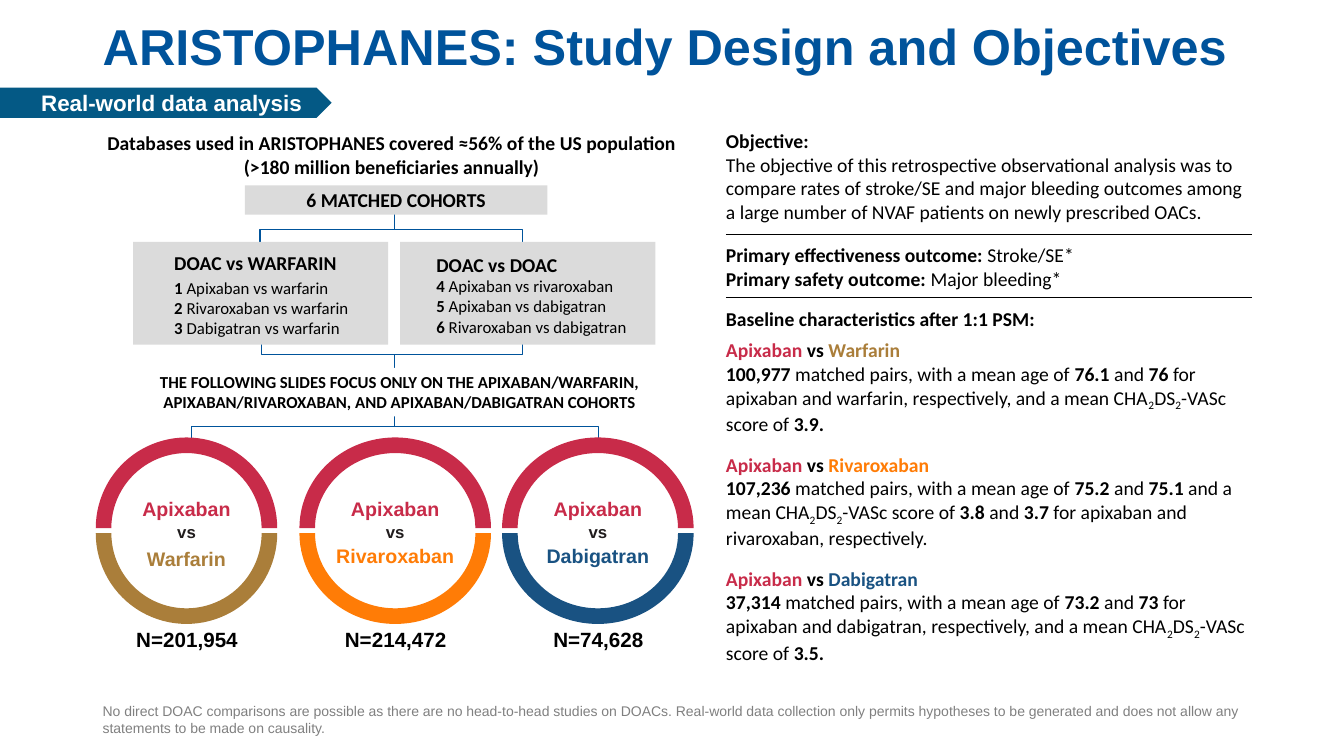
from copy import deepcopy
from dataclasses import dataclass

from lxml.etree import SubElement
from pptx import Presentation
from pptx.dml.color import RGBColor
from pptx.enum.shapes import MSO_CONNECTOR, MSO_SHAPE
from pptx.enum.text import MSO_ANCHOR as ANCHOR, MSO_AUTO_SIZE, PP_ALIGN as ALIGN
from pptx.oxml.ns import qn
from pptx.util import Pt

PX = 9144  # 100 px to the inch


@dataclass(frozen=True)
class Theme:
    head: str = "Arial"
    body: str = "Calibri"
    blue: str = "00539B"
    banner: str = "045985"
    panel: str = "DBDBDB"
    black: str = "000000"
    ink: str = "201C1D"
    white: str = "FFFFFF"
    grey: str = "808080"
    apixaban: str = "C82B49"
    warfarin: str = "AA7E3A"
    rivaroxaban: str = "FF7C06"
    dabigatran: str = "195282"
    title: float = 36
    tag: float = 16
    count: float = 14.7
    text: float = 14
    small: float = 12
    note: float = 10


T = Theme()


@dataclass(frozen=True)
class Run:
    text: str
    bold: bool = False
    color: str = T.black
    size: float = T.text
    font: str = T.body
    sub: bool = False


def bold(text, color=T.black, size=T.text, font=T.body):
    return Run(text, True, color, size, font)


def px(*values):
    return [round(v * PX) for v in values]


def rgb(color):
    return RGBColor.from_string(color)


def add_run(p, run):
    """Add a run; each newline in its text becomes a line break of the same size."""
    for i, piece in enumerate(run.text.split("\n")):
        if i:
            p.add_line_break()
            p._p[-1].append(deepcopy(r._r.get_or_add_rPr()))
        if not piece:
            continue
        r = p.add_run()
        r.text = piece
        f = r.font
        f.name, f.size, f.bold = run.font, Pt(run.size), run.bold
        f.color.rgb = rgb(run.color)
        if run.sub:
            r._r.get_or_add_rPr().set("baseline", "-25000")


def fill_text(s, paragraphs, align=ALIGN.LEFT, anchor=ANCHOR.TOP, inset=(10, 5, 10, 5),
              before=(), after=(), indent=(0, 0), spacing=None, wrap=True):
    """Write lists of runs; before and after hold points per paragraph."""
    tf = s.text_frame
    tf.word_wrap, tf.vertical_anchor = wrap, anchor
    if not wrap:
        tf.auto_size = MSO_AUTO_SIZE.SHAPE_TO_FIT_TEXT
    tf.margin_left, tf.margin_top, tf.margin_right, tf.margin_bottom = px(*inset)
    for i, runs in enumerate(paragraphs):
        p = tf.add_paragraph() if i else tf.paragraphs[0]
        p.alignment = align
        if spacing:
            p.line_spacing = spacing
        if i < len(before) and before[i]:
            p.space_before = Pt(before[i])
        if i < len(after) and after[i]:
            p.space_after = Pt(after[i])
        if any(indent):
            pPr = p._p.get_or_add_pPr()
            for key, value in zip(("marL", "indent"), px(*indent)):
                pPr.set(key, str(value))
        for run in runs:
            add_run(p, run)


def textbox(slide, box, paragraphs, **style):
    fill_text(slide.shapes.add_textbox(*px(*box)), paragraphs, **style)


def block(slide, kind, box, color):
    s = slide.shapes.add_shape(kind, *px(*box))
    s.shadow.inherit = False
    s.fill.solid()
    s.fill.fore_color.rgb = rgb(color)
    s.line.fill.background()
    return s


def panel(slide, box, paragraphs, color=T.panel, kind=MSO_SHAPE.RECTANGLE, **style):
    fill_text(block(slide, kind, box, color), paragraphs, **style)


def branch(slide, stem_y, bar_y, end_y, ends, stem_x=391):
    """Elbow lines from one stem to each end."""
    for x in ends:
        fb = slide.shapes.build_freeform(*px(stem_x, stem_y), scale=1.0)
        corners = ((stem_x, bar_y), (x, bar_y), (x, end_y))
        fb.add_line_segments([px(*c) for c in corners], close=False)
        s = fb.convert_to_shape()
        s.shadow.inherit = False
        s.fill.background()
        s.line.color.rgb, s.line.width = rgb(T.blue), Pt(0.85)


def divider(slide, y):
    c = slide.shapes.add_connector(MSO_CONNECTOR.STRAIGHT, *px(720, y, 1242, y))
    c.line.color.rgb, c.line.width = rgb(T.black), Pt(0.75)
    SubElement(c._element.spPr, qn("a:effectLst"))


def ring(slide, cx, width, name, color, name_width, spacing, count):
    """Two half rings around a comparison, with the patient count below."""
    for y, start, end, half in ((439, 0, 108, color), (434, 108, 0, T.apixaban)):
        s = block(slide, MSO_SHAPE.BLOCK_ARC, (cx - width / 2, y, width, 180), half)
        for i, value in enumerate((start, end, 0.086)):
            s.adjustments[i] = value
    labels = (("Apixaban", T.apixaban, T.text, 493, 88, 24, None),
              ("vs", T.ink, T.small, 518, 19, 20, None),
              (name, color, T.text, 543, name_width, 24 if spacing is None else 20, spacing))
    for text, ink, size, y, w, h, gap in labels:
        textbox(slide, (cx - w / 2, y, w, h), [[bold(text, ink, size, T.head)]],
                align=ALIGN.CENTER, inset=(0, 0, 0, 0), spacing=gap, wrap=False)
    textbox(slide, (cx - 66, 621, 133, 27), [[bold(count, size=T.count, font=T.head)]],
            align=ALIGN.CENTER, inset=(7, 1, 7, 1))


def numbered(number, text):
    return [bold(str(number), size=T.small), Run(f" {text}", size=T.small)]


def baseline(name, color, pairs, ages, lead, *tail):
    """Runs that describe one matched comparison."""
    return [bold("Apixaban", T.apixaban), bold(" vs "), bold(f"{name}\n", color),
            bold(pairs), Run(" matched pairs, with a mean age of "),
            bold(ages[0]), Run(" and "), bold(ages[1]), Run(f"{lead} and a mean CHA"),
            Run("2", sub=True), Run("DS"), Run("2", sub=True), Run("-VASc score of "), *tail]


def draw_cohorts(slide):
    textbox(slide, (84, 125, 609, 57),
            [[bold("Databases used in ARISTOPHANES covered ≈56% of the US population "
                   "(>180 million beneficiaries annually)")]], align=ALIGN.CENTER)
    branch(slide, 410, 423, 443, (190, 594))
    branch(slide, 372, 352, 339, (259, 518))
    branch(slide, 203, 228, 245, (258, 518))
    panel(slide, (243, 184, 300, 29), [[bold("6 MATCHED COHORTS")]],
          align=ALIGN.CENTER, anchor=ANCHOR.MIDDLE, after=(5.3,))

    for args in ((185, 180, "Warfarin", T.warfarin, 80, None, "N=201,954"),
                 (392, 190, "Rivaroxaban", T.rivaroxaban, 130, 0.85, "N=214,472"),
                 (593, 190, "Dabigatran", T.dabigatran, 130, 0.85, "N=74,628")):
        ring(slide, *args)

    warfarin = [numbered(i, f"{drug} vs warfarin")
                for i, drug in enumerate(("Apixaban", "Rivaroxaban", "Dabigatran"), 1)]
    doac = (numbered(4, "Apixaban vs rivaroxaban\n") + numbered(5, "Apixaban vs dabigatran\n")
            + numbered(6, "Rivaroxaban vs dabigatran"))
    for x, heading, rows, indent, after in (
            (132, "DOAC vs WARFARIN", warfarin, (25, 6), (2,)),
            (397, "DOAC vs DOAC", [doac], (26, 0), ())):
        panel(slide, (x, 240, 253, 102), [[bold(heading)], *rows], anchor=ANCHOR.MIDDLE,
              inset=(10, 7, 10, 5), indent=indent, after=after)
    panel(slide, (95, 365, 603, 48),
          [[bold("THE FOLLOWING SLIDES FOCUS ONLY ON THE APIXABAN/WARFARIN, "
                 "APIXABAN/RIVAROXABAN, AND APIXABAN/DABIGATRAN COHORTS", size=T.small)]],
          color=T.white, align=ALIGN.CENTER, inset=(10, 4, 10, 4))


def draw_objectives(slide):
    flush = dict(inset=(0, 0, 0, 0))
    textbox(slide, (720, 128, 522, 94),
            [[bold("Objective:\n"),
              Run("The objective of this retrospective observational analysis was to compare "
                  "rates of stroke/SE and major bleeding outcomes among a large number of "
                  "NVAF patients on newly prescribed OACs.")]], **flush)
    divider(slide, 233)
    textbox(slide, (720, 241, 522, 47),
            [[bold("Primary effectiveness outcome: "), Run("Stroke/SE*\n"),
              bold("Primary safety outcome: "), Run("Major bleeding*")]], **flush)
    divider(slide, 295)
    textbox(slide, (720, 304, 522, 348), [
        [bold("Baseline characteristics after 1:1 PSM:")],
        baseline("Warfarin", T.warfarin, "100,977", ("76.1", "76"),
                 " for apixaban and warfarin, respectively,", bold("3.9.")),
        baseline("Rivaroxaban", T.rivaroxaban, "107,236", ("75.2", "75.1"), "",
                 bold("3.8"), Run(" and "), bold("3.7"),
                 Run(" for apixaban and rivaroxaban, respectively.")),
        baseline("Dabigatran", T.dabigatran, "37,314", ("73.2", "73"),
                 " for apixaban and dabigatran, respectively,", bold("3.5.")),
    ], before=(0, 6, 12, 12), **flush)


def main():
    prs = Presentation()
    prs.slide_width, prs.slide_height = px(1333, 750)
    slide = prs.slides.add_slide(prs.slide_layouts[6])
    textbox(slide, (92, 0, 1150, 81),
            [[bold("ARISTOPHANES: Study Design and Objectives", T.blue, T.title, T.head)]],
            anchor=ANCHOR.BOTTOM, spacing=0.9)
    textbox(slide, (92, 695, 1150, 40),
            [[Run("No direct DOAC comparisons are possible as there are no head-to-head studies "
                  "on DOACs. Real-world data collection only permits hypotheses to be generated "
                  "and does not allow any statements to be made on causality.",
                  color=T.grey, size=T.note, font=T.head)]], anchor=ANCHOR.BOTTOM)
    draw_cohorts(slide)
    draw_objectives(slide)
    panel(slide, (-1, 87, 330, 30),
          [[bold("Real-world data analysis", T.white, T.tag, T.head)]],
          color=T.banner, kind=MSO_SHAPE.PENTAGON, anchor=ANCHOR.MIDDLE, indent=(32, 0))
    prs.save("out.pptx")


if __name__ == "__main__":
    main()
